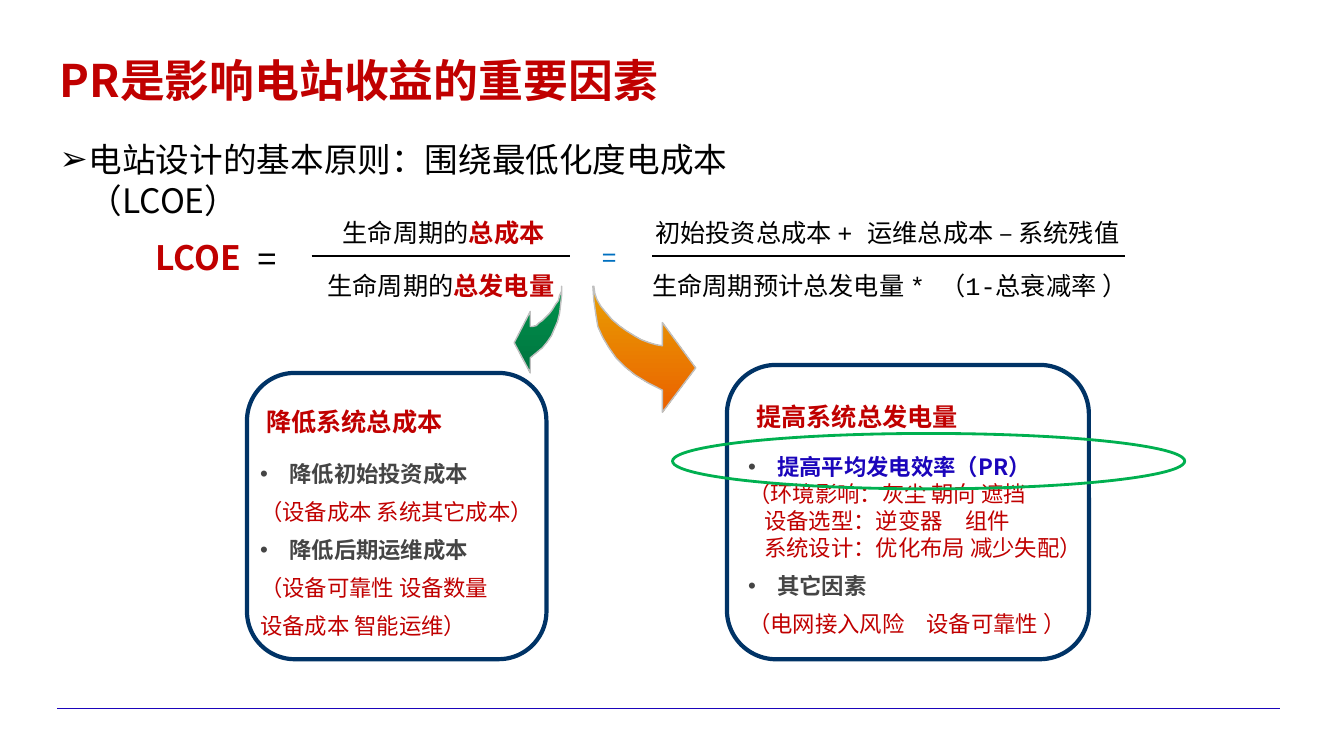
"""Build the slide that explains how PR drives power station returns."""
from dataclasses import dataclass

from lxml.etree import SubElement
from pptx import Presentation
from pptx.dml.color import RGBColor
from pptx.enum.shapes import MSO_CONNECTOR, MSO_SHAPE
from pptx.enum.text import MSO_ANCHOR, MSO_AUTO_SIZE, PP_ALIGN
from pptx.oxml.ns import qn
from pptx.util import Pt

PX = 9144
SANS, MONO = "Noto Sans CJK SC", "Courier New"
RED = RGBColor(0xC0, 0x00, 0x00)
BLACK = RGBColor(0x00, 0x00, 0x00)
GRAY = RGBColor(0x45, 0x45, 0x45)
VIOLET = RGBColor(0x1B, 0x05, 0xBB)
BLUE = RGBColor(0x00, 0x70, 0xC0)
NAVY = RGBColor(0x00, 0x33, 0x66)
GREEN = RGBColor(0x00, 0xB0, 0x50)
SILVER = RGBColor(0xC0, 0xC0, 0xC0)
LEAF = (RGBColor(0x00, 0x94, 0x4C), RGBColor(0x00, 0x74, 0x40))
ORANGE = (RGBColor(0xE8, 0x9F, 0x02), RGBColor(0xEB, 0x61, 0x00))
HANG = 29


@dataclass
class Line:
    """One paragraph: its wording, an optional red bold ending, and its format."""
    text: str
    size: int = 16
    color: RGBColor = RED
    bold: bool = False
    font: str = SANS
    strong: str = ""
    bullet: str = ""
    bullet_color: RGBColor = GRAY
    indent: int = 0
    before: int = 0
    after: int = 0


def term(text, strong="", color=BLACK, size=18):
    """Return one part of the formula."""
    return Line(text, size, color, font=MONO, strong=strong)


def point(text, color=GRAY, before=8):
    """Return one bold bullet of a panel."""
    return Line(text, color=color, bold=True, bullet="•", before=before)


TITLE = Line("PR是影响电站收益的重要因素", 32, bold=True)
PRINCIPLE = Line("电站设计的基本原则：围绕最低化度电成本（LCOE）", 24, BLACK,
                 bullet="➢", bullet_color=BLACK)

FORMULA = [
    ((143, 230, 107, 50), Line("LCOE", 24, bold=True), True),
    ((245, 230, 55, 50), term("=", size=24), False),
    ((307, 211, 266, 40), term("生命周期的", "总成本"), True),
    ((315, 263, 266, 40), term("生命周期的", "总发电量"), False),
    ((587, 234, 40, 40), term("=", color=BLUE), False),
    ((622, 211, 516, 40), term("初始投资总成本 + 运维总成本 – 系统残值"), True),
    ((622, 263, 521, 40), term("生命周期预计总发电量 * （1-总衰减率 ）"), True),
]

PANEL_TEXTS = [
    ((737, 391, 328, 45), [Line("提高系统总发电量", 18, bold=True, font=MONO)]),
    ((729, 443, 367, 197), [
        point("提高平均发电效率（PR）", VIOLET, 0),
        Line("（环境影响：灰尘 朝向 遮挡"),
        Line("设备选型：逆变器　组件", indent=16),
        Line("系统设计：优化布局 减少失配）", indent=16),
        point("其它因素"),
        Line("（电网接入风险　设备可靠性 ）", before=8),
    ]),
    ((245, 396, 328, 247), [
        Line("降低系统总成本", 18, bold=True, font=MONO, indent=6, after=9),
        point("降低初始投资成本"),
        Line("（设备成本 系统其它成本）", before=8),
        point("降低后期运维成本"),
        Line("（设备可靠性 设备数量", before=8),
        Line("设备成本 智能运维）", before=8),
    ]),
]

RULES = [
    ((57, 703, 1270, 703), VIOLET, 0.75),
    ((309, 254, 565, 254), BLACK, 1.5),
    ((647, 254, 1116, 254), BLACK, 1.5),
]
PANELS = [(721, 362, 359, 292), (245, 370, 297, 284)]
PR_RING = (667, 430, 508, 55)

ARROWS = [
    (LEAF, [
        (557, 284), (557, 294), (556, 303), (555, 311), (553, 319), (550, 326),
        (547, 333), (543, 339), (538, 345), (532, 350), (526, 355), (526, 370),
        (510, 340), (526, 309), (526, 324), (528, 324), (532, 323), (535, 320),
        (538, 318), (542, 314), (545, 311), (548, 307), (551, 302), (554, 298),
        (555, 293), (557, 289)]),
    (ORANGE, [
        (588, 284), (589, 298), (591, 312), (593, 324), (598, 335), (604, 345),
        (611, 355), (620, 364), (630, 372), (643, 380), (657, 387), (657, 409),
        (690, 365), (657, 320), (657, 343), (651, 342), (644, 340), (636, 337),
        (629, 333), (621, 328), (614, 323), (607, 317), (601, 310), (596, 304),
        (592, 297), (590, 291), (589, 284)]),
]


def emu(lengths):
    """Turn px lengths into EMU."""
    return [length * PX for length in lengths]


def place(box, area):
    """Move and size a placeholder."""
    box.left, box.top, box.width, box.height = emu(area)


def write(box, lines, align=PP_ALIGN.LEFT, anchor=MSO_ANCHOR.TOP, inset=(10, 5)):
    """Fill a box with formatted paragraphs."""
    frame = box.text_frame
    frame.auto_size = MSO_AUTO_SIZE.NONE
    frame.word_wrap = align != PP_ALIGN.CENTER
    frame.vertical_anchor = anchor
    frame.margin_left = frame.margin_right = inset[0] * PX
    frame.margin_top = frame.margin_bottom = inset[1] * PX
    for index, line in enumerate(lines):
        para = frame.add_paragraph() if index else frame.paragraphs[0]
        para.alignment = align
        para.line_spacing = Pt(line.size * 1.2)
        para.space_before, para.space_after = Pt(line.before), Pt(line.after)
        props = para._p.get_or_add_pPr()
        hang = HANG if line.bullet else 0
        props.set("marL", str((line.indent + hang) * PX))
        props.set("indent", str(-hang * PX))
        if line.bullet:
            tint = SubElement(props, qn("a:buClr"))
            SubElement(tint, qn("a:srgbClr"), val=str(line.bullet_color))
            SubElement(props, qn("a:buFont"), typeface="Arial")
            SubElement(props, qn("a:buChar"), char=line.bullet)
        font = para.font
        font.name, font.size, font.bold = line.font, Pt(line.size), line.bold
        font.color.rgb = line.color
        for text in filter(None, (line.text, line.strong)):
            span = para.add_run()
            span.text = text
            if text == line.strong:
                span.font.bold = True
                span.font.color.rgb = RED
            SubElement(span._r.get_or_add_rPr(), qn("a:ea"), typeface=SANS)


def outline(shape, color, width):
    """Give a shape a plain outline without shadow."""
    shape.shadow.inherit = False
    shape.line.color.rgb = color
    shape.line.width = Pt(width)


def add_outlined(page, kind, area, color, width):
    """Add an unfilled preset shape."""
    shape = page.shapes.add_shape(kind, *emu(area))
    shape.fill.background()
    outline(shape, color, width)


def add_arrow(page, colors, points):
    """Add a curved arrow with a gradient from top to bottom."""
    builder = page.shapes.build_freeform(*points[0], scale=PX)
    builder.add_line_segments(points[1:], close=True)
    arrow = builder.convert_to_shape()
    arrow.fill.gradient()
    arrow.fill.gradient_angle = 270
    for position, (stop, color) in enumerate(zip(arrow.fill.gradient_stops, colors)):
        stop.position = position
        stop.color.rgb = color
    outline(arrow, SILVER, 1)


def main():
    """Build and save the slide."""
    deck = Presentation()
    deck.slide_width, deck.slide_height = emu((1333, 750))
    page = deck.slides.add_slide(deck.slide_layouts[1])
    title, body = page.placeholders
    place(title, (49, 47, 1125, 64))
    write(title, [TITLE], anchor=MSO_ANCHOR.MIDDLE)
    place(body, (49, 133, 800, 90))
    write(body, [PRINCIPLE])
    for ends, color, width in RULES:
        rule = page.shapes.add_connector(MSO_CONNECTOR.STRAIGHT, *emu(ends))
        rule.line.color.rgb, rule.line.width = color, Pt(width)
        SubElement(rule._element.spPr, qn("a:effectLst"))
    for area, line, centered in FORMULA:
        align = PP_ALIGN.CENTER if centered else PP_ALIGN.LEFT
        write(page.shapes.add_textbox(*emu(area)), [line], align, MSO_ANCHOR.MIDDLE)
    for area in PANELS:
        add_outlined(page, MSO_SHAPE.ROUNDED_RECTANGLE, area, NAVY, 3)
    for colors, points in ARROWS:
        add_arrow(page, colors, points)
    for area, lines in PANEL_TEXTS:
        write(page.shapes.add_textbox(*emu(area)), lines, inset=(13, 7))
    add_outlined(page, MSO_SHAPE.OVAL, PR_RING, GREEN, 2)
    deck.save("out.pptx")


if __name__ == "__main__":
    main()
